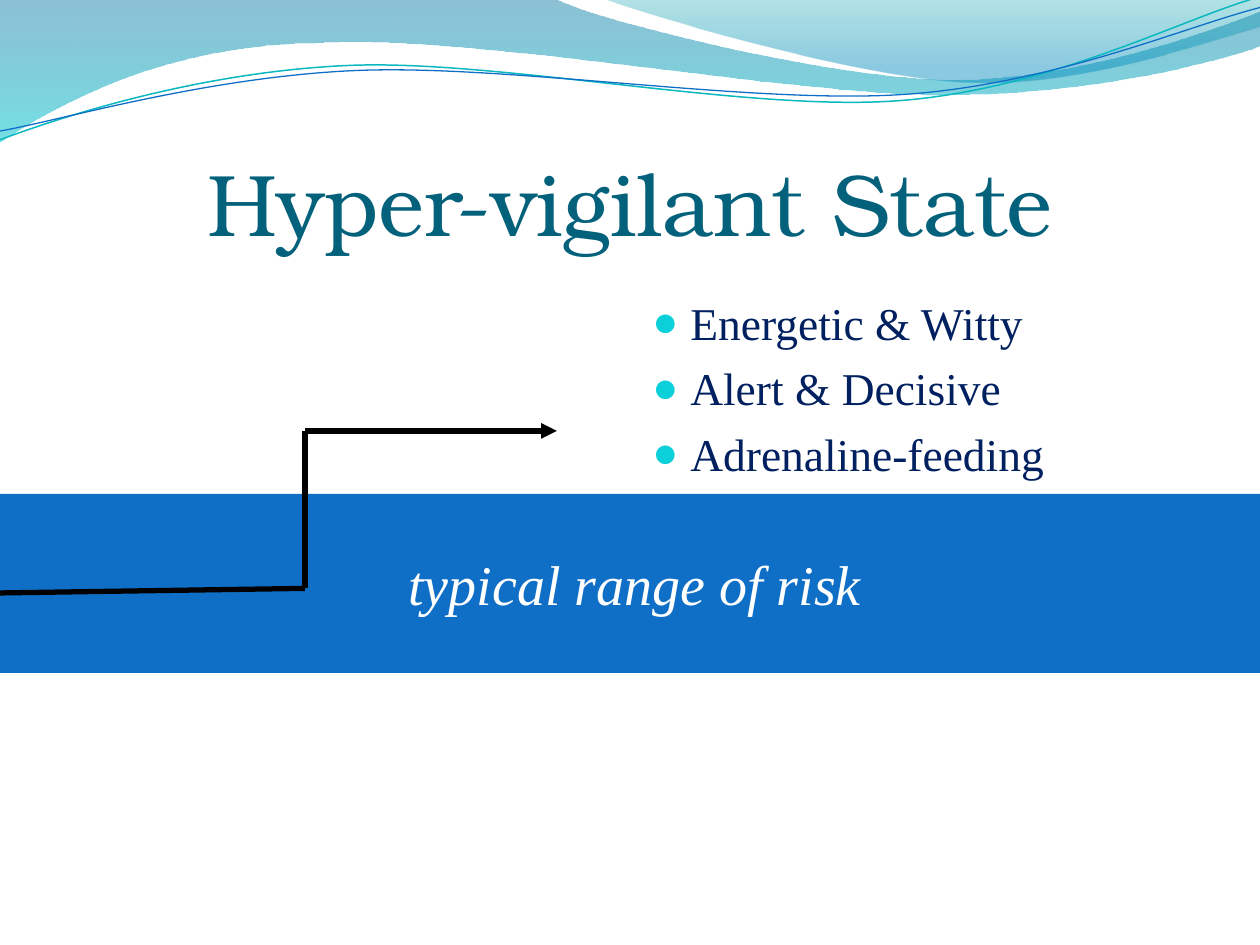
from lxml import etree
from pptx import Presentation
from pptx.dml.color import RGBColor
from pptx.enum.dml import MSO_THEME_COLOR
from pptx.enum.shapes import MSO_CONNECTOR, MSO_SHAPE
from pptx.enum.text import MSO_ANCHOR, MSO_AUTO_SIZE, PP_ALIGN
from pptx.oxml.ns import qn
from pptx.util import Inches, Pt

RECT = MSO_SHAPE.RECTANGLE
STRAIGHT = MSO_CONNECTOR.STRAIGHT
ACCENT = MSO_THEME_COLOR.ACCENT_1
CENTER = PP_ALIGN.CENTER
MIDDLE, BOTTOM = MSO_ANCHOR.MIDDLE, MSO_ANCHOR.BOTTOM
FIXED = MSO_AUTO_SIZE.NONE

WHITE = RGBColor(0xFF, 0xFF, 0xFF)
BLACK = RGBColor(0, 0, 0)
BLUE = RGBColor(0x0F, 0x6F, 0xC6)
TEAL = RGBColor(0x0A, 0xB8, 0xBF)
DEEP = RGBColor(0x04, 0x61, 0x7B)
NAVY = RGBColor(0x00, 0x20, 0x60)
AQUA = RGBColor(0x0B, 0xD0, 0xD9)
SEA = RGBColor(0x00, 0x74, 0xA1)
CYAN = RGBColor(0x00, 0xC6, 0xCF)
MINT = RGBColor(0x00, 0xA1, 0xA9)
SKY = RGBColor(0x00, 0x8B, 0xBF)

SERIF = "Times New Roman"
HEAD = {"name": "TeX Gyre Bonum", "size": Pt(50), "bold": False}
LIST = {"name": SERIF, "size": Pt(26)}
LABEL = {"name": SERIF, "size": Pt(32), "italic": True}
TRAITS = ["Energetic & Witty", "Alert & Decisive", "Adrenaline-feeding"]

FILLS = [
    ([(0, -0.01), (4.4, -0.01), (4.76, 0.17, 6.64, 0.63, 7.58, 0.63),
      (8.53, 0.63, 9.58, 0.26, 10, 0.09), (10.01, 0.36),
      (9.83, 0.44, 8.7, 0.76, 7.46, 0.75), (6.22, 0.75, 3.82, 0.28, 2.57, 0.34),
      (1.29, 0.35, 0.46, 0.83, -0.01, 1.13), (0, -0.01)],
     [(0, SEA, 45), (1, CYAN, 55)]),
    ([(4.79, -0.01), (5.09, 0.11, 6.82, 0.62, 7.69, 0.65),
      (8.56, 0.69, 9.61, 0.32, 10, 0.21), (10, 0), (4.79, -0.01)],
     [(0, MINT, 30), (0.8, SKY, 45)]),
]
LINES = [
    ([(0, 1.11), (0.48, 0.93, 1.58, 0.57, 2.77, 0.52),
      (3.95, 0.47, 5.93, 0.89, 7.13, 0.8), (8.33, 0.71, 9.38, 0.15, 9.98, -0.02)],
     TEAL, 0.85),
    ([(0, 1.04), (0.47, 0.96, 1.64, 0.61, 2.83, 0.56),
      (4.03, 0.51, 5.97, 0.83, 7.17, 0.75), (8.36, 0.67, 9.41, 0.21, 10, 0.06)],
     BLUE, 0.75),
]


def style(font, look, color):
    """Apply a dict of format values and a colour to a font."""
    for key, value in look.items():
        setattr(font, key, value)
    font.color.rgb = color


def draw(slide, track, left, top, close):
    """Draw lines and cubic curves as a freeform offset by left and top."""
    knots = [(Inches(left + part[-2]), Inches(top + part[-1])) for part in track]
    pen = slide.shapes.build_freeform(*knots[0])
    pen.add_line_segments(knots[1:], close=close)
    shape = pen.convert_to_shape()
    shape.shadow.inherit = False
    sides = list(shape._element.iter(qn("a:lnTo")))
    for side, part in zip(sides, track[1:]):
        if len(part) == 6:
            curve = etree.Element(qn("a:cubicBezTo"))
            for x, y in zip(part[::2], part[1::2]):
                etree.SubElement(curve, qn("a:pt"),
                                 x=str(Inches(left + x) - shape.left),
                                 y=str(Inches(top + y) - shape.top))
            side.getparent().replace(side, curve)
    return shape


def add_waves(slide, left, top):
    """Draw the shaded waves and the two thin curves."""
    for track, shades in FILLS:
        wave = draw(slide, track, left, top, True)
        wave.line.fill.background()
        wave.fill.gradient()
        wave.fill.gradient_angle = 270
        for stop, (place, color, alpha) in zip(wave.fill.gradient_stops, shades):
            stop.position = place
            stop.color.theme_color = ACCENT
            stop.color.rgb = color
        marks = wave.fill._fill._gradFill.iter(qn("a:srgbClr"))
        for mark, shade in zip(marks, shades):
            etree.SubElement(mark, qn("a:alpha"), val=str(shade[2] * 1000))
    for track, color, width in LINES:
        curve = draw(slide, track, left, top, False)
        curve.fill.background()
        curve.line.color.rgb = color
        curve.line.width = Pt(width)


def add_title(slide, left, top, width, height):
    """Place and format the title in front of the waves."""
    title = slide.shapes.title
    slide.shapes._spTree.append(title._element)
    title.left, title.top = Inches(left), Inches(top)
    title.width, title.height = Inches(width), Inches(height)
    frame = title.text_frame
    frame.text = "Hyper-vigilant State"
    frame.auto_size = FIXED
    frame.vertical_anchor = BOTTOM
    frame.margin_left = frame.margin_right = frame.margin_bottom = 0
    para = frame.paragraphs[0]
    para.alignment = CENTER
    style(para.runs[0].font, HEAD, DEEP)


def add_traits(slide, left, top, width, height):
    """Write the bulleted list of traits."""
    box = slide.shapes.add_textbox(Inches(left), Inches(top), Inches(width), Inches(height))
    frame = box.text_frame
    frame.word_wrap = True
    frame.margin_top = Inches(0.09)
    for i, text in enumerate(TRAITS):
        para = frame.paragraphs[0] if i == 0 else frame.add_paragraph()
        props = para._p.get_or_add_pPr()
        props.set("marL", str(Inches(0.3)))
        props.set("indent", str(Inches(-0.3)))
        tint = etree.SubElement(props, qn("a:buClr"))
        etree.SubElement(tint, qn("a:srgbClr"), val=str(AQUA))
        etree.SubElement(props, qn("a:buSzPct"), val="95000")
        etree.SubElement(props, qn("a:buFont"), typeface=SERIF)
        etree.SubElement(props, qn("a:buChar"), char="●")
        if i:
            para.space_before = Pt(6.2)
        run = para.add_run()
        run.text = text
        style(run.font, LIST, NAVY)


def add_band(slide, left, top, width, height):
    """Draw the band for the typical range of risk."""
    band = slide.shapes.add_shape(RECT, Inches(left), Inches(top), Inches(width), Inches(height))
    band.shadow.inherit = False
    band.fill.solid()
    band.fill.fore_color.rgb = BLUE
    band.line.fill.background()
    frame = band.text_frame
    frame.text = "typical range of risk"
    frame.word_wrap = False
    frame.vertical_anchor = MIDDLE
    para = frame.paragraphs[0]
    para.alignment = CENTER
    style(para.runs[0].font, LABEL, WHITE)


def add_step(slide, left, top, width, height):
    """Draw the line that steps up and ends in an arrow."""
    bend, base = left + 3.34, top + height
    points = [(left, base), (bend, base - 0.05), (bend, top), (left + width, top)]
    for start, end in zip(points, points[1:]):
        ends = [Inches(value) for value in start + end]
        line = slide.shapes.add_connector(STRAIGHT, *ends)
        line.line.color.rgb = BLACK
        line.line.width = Pt(3)
        etree.SubElement(line._element.spPr, qn("a:effectLst"))
    etree.SubElement(line.line._get_or_add_ln(), qn("a:tailEnd"), type="triangle")


def main():
    """Build the slide and save it."""
    deck = Presentation()
    deck.slide_width, deck.slide_height = Inches(10), Inches(7.5)
    slide = deck.slides.add_slide(deck.slide_layouts[5])
    add_waves(slide, 0, 0)
    add_title(slide, 0.5, 0.77, 9, 1.25)
    add_traits(slide, 5.08, 2.25, 4.42, 4.7)
    add_band(slide, -0.42, 3.92, 10.92, 1.42)
    add_step(slide, -0.92, 3.42, 5.34, 1.3)
    deck.save("out.pptx")


if __name__ == "__main__":
    main()
